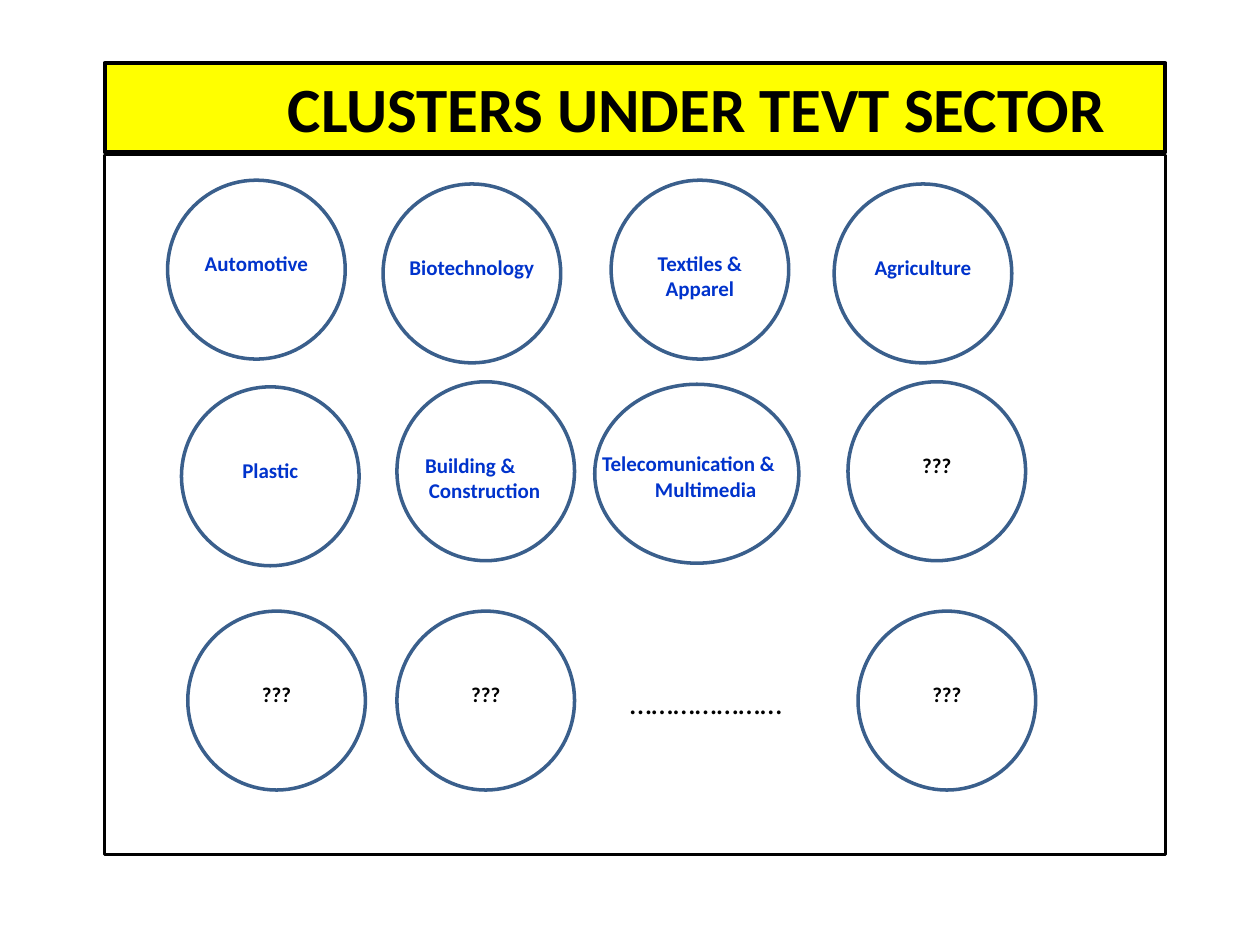
"""Draw the clusters of the TEVT sector as rows of labelled circles."""
from pptx import Presentation as Deck
from pptx.dml.color import RGBColor as Rgb
from pptx.enum.shapes import MSO_SHAPE as Kind
from pptx.enum.text import MSO_ANCHOR as Anchor, MSO_AUTO_SIZE as Fit, PP_ALIGN as Align
from pptx.util import Inches, Pt

HUES = {"ink": "000000", "band": "FFFF00", "ring": "3A5F8C", "name": "0033CC"}
COLS, ROWS = 100, 75
SIDE, HIGH = 14.1, 14.2


class Board:
    def __init__(self):
        self.deck = Deck()
        self.deck.slide_width, self.deck.slide_height = Inches(10), Inches(7.5)
        self.slide = self.deck.slides.add_slide(self.deck.slide_layouts[5])
        self.font = "Calibri"

    def span(self, x, y, w, h):
        col, row = self.deck.slide_width / COLS, self.deck.slide_height / ROWS
        return [round(v * unit) for v, unit in zip((x, y, w, h), (col, row, col, row))]

    def edge(self, shape, hue, width):
        shape.line.color.rgb = Rgb.from_string(HUES[hue])
        shape.line.width = Pt(width)

    def letter(self, frame, lines, size, hue, bold, align, pads=()):
        frame.text = "\n".join(lines)
        for para in frame.paragraphs:
            para.alignment = align
            look = {"name": self.font, "size": Pt(size), "bold": bold}
            for key, value in look.items():
                setattr(para.font, key, value)
            para.font.color.rgb = Rgb.from_string(HUES[hue])
        for para, pad in zip(frame.paragraphs, pads):
            para.alignment = Align.LEFT
            props = para._p.get_or_add_pPr()
            props.set("marL", str(Inches(pad)))
            props.set("indent", "0")

    def title(self, text, *area):
        head = self.slide.shapes.title
        head.left, head.top, head.width, head.height = self.span(*area)
        head.fill.solid()
        head.fill.fore_color.rgb = Rgb.from_string(HUES["band"])
        self.edge(head, "ink", 2.25)
        frame = head.text_frame
        form = {"margin_left": Inches(1.08), "auto_size": Fit.NONE,
                "vertical_anchor": Anchor.MIDDLE, "word_wrap": True}
        for key, value in form.items():
            setattr(frame, key, value)
        self.letter(frame, [text], 36, "ink", True, Align.CENTER)

    def shape(self, kind, hue, width, *area):
        item = self.slide.shapes.add_shape(kind, *self.span(*area))
        item.shadow.inherit = False
        item.fill.background()
        self.edge(item, hue, width)

    def label(self, lines, area, size=12, hue="name", bold=True,
              align=Align.CENTER, pads=()):
        frame = self.slide.shapes.add_textbox(*self.span(*area)).text_frame
        form = {"word_wrap": True, "auto_size": Fit.SHAPE_TO_FIT_TEXT,
                "vertical_anchor": Anchor.TOP}
        for key, value in form.items():
            setattr(frame, key, value)
        self.letter(frame, lines, size, hue, bold, align, pads)

    def ring(self, x, y, lines, wide=SIDE, room=12, drop=5.1, pads=()):
        self.shape(Kind.OVAL, "ring", 2, x, y, wide, HIGH)
        hue = "ink" if lines == ["???"] else "name"
        tall = 5 if pads or "&" in lines[0] else 3
        area = (x + (wide - room) / 2, y + drop, room, tall)
        self.label(lines, area, hue=hue, pads=pads)


def main():
    board = Board()
    board.title("CLUSTERS UNDER TEVT SECTOR", 8.3, 5, 84.2, 7.1)
    board.shape(Kind.RECTANGLE, "ink", 1.5, 8.3, 12.3, 84.2, 55.5)
    rings = [
        (13.3, 14.3, "Automotive"), (30.4, 14.6, "Biotechnology"),
        (48.5, 14.3, "Textiles & Apparel"), (66.2, 14.6, "Agriculture"),
        (14.4, 30.7, "Plastic"), (67.3, 30.3, "???"),
        (14.9, 48.5, "???"), (31.5, 48.5, "???"), (68.1, 48.5, "???"),
    ]
    for x, y, name in rings:
        board.ring(x, y, [name])
    board.ring(31.5, 30.3, ["Building &", "Construction"], pads=(0.02, 0.05))
    board.ring(47.2, 30.5, ["Telecomunication &", "Multimedia"],
               wide=16.2, room=19, drop=4.8, pads=(0.1, 0.52))
    board.label(["…………………"], (49, 53.7, 16.7, 4), size=18, hue="ink",
                bold=False, align=Align.LEFT)
    board.deck.save("out.pptx")


if __name__ == "__main__":
    main()
